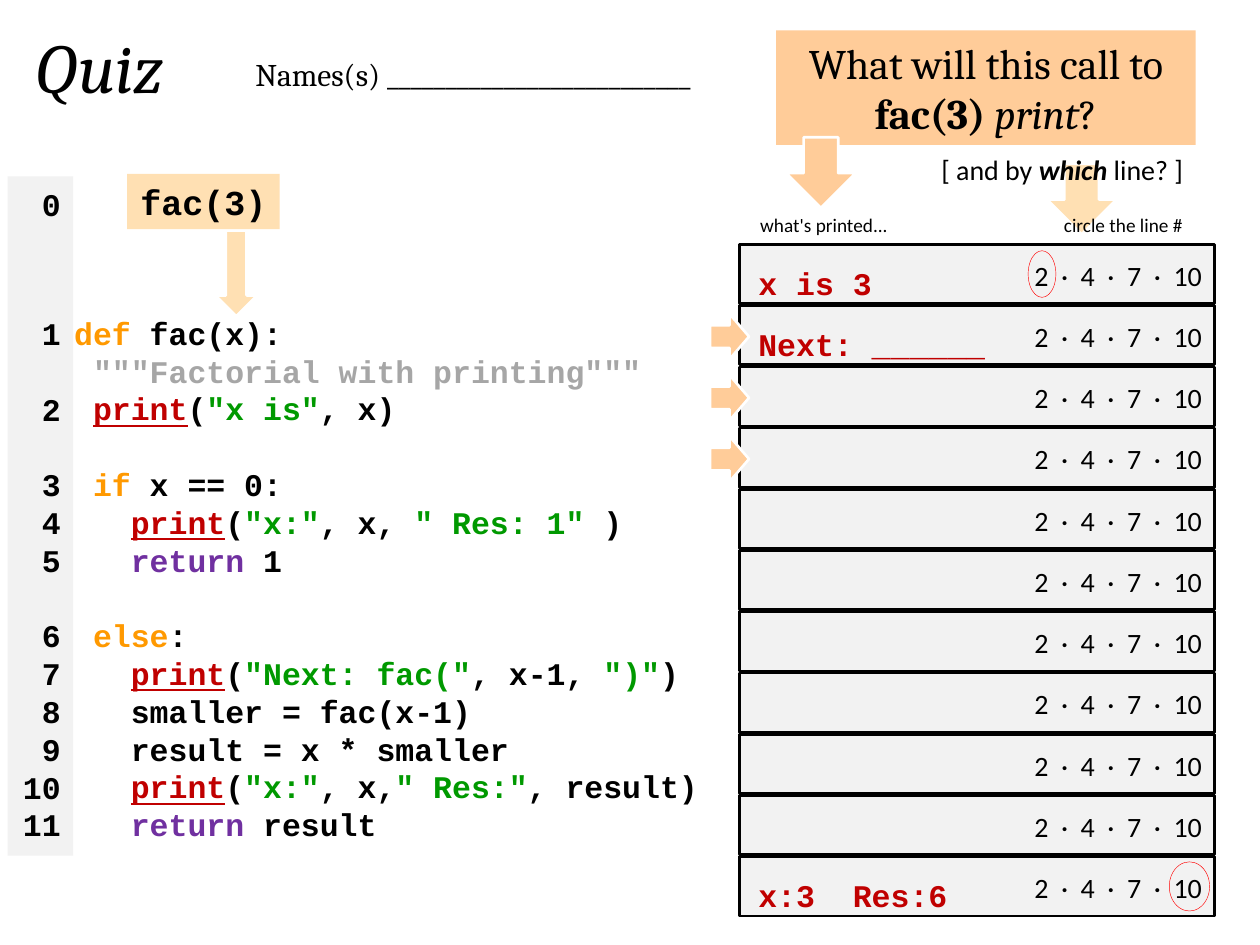
from pptx import Presentation
from pptx.dml.color import RGBColor
from pptx.enum.shapes import MSO_SHAPE as SHAPE
from pptx.enum.text import MSO_ANCHOR as ANCHOR, PP_ALIGN as ALIGN
from pptx.util import Inches, Pt

COLORS = {
    "black": "000000", "white": "FFFFFF", "panel": "F2F2F2",
    "orange": "FFCC99", "sand": "FFE0B3", "ring": "FF0000",
    "keyword": "FF9900", "doc": "A6A6A6", "call": "C00000",
    "string": "009900", "return": "7030A0",
}
MONO, SERIF, SANS = "Courier New", "Cambria", "Calibri"
LINE = 21.6
CHAR = 0.15

PRINT = ("print", "call")
CODE = [
    (1, 0, [("def ", "keyword"), ("fac(x):", "black")]),
    (2, 0, [('"""Factorial with printing"""', "doc")]),
    (2, 0, [PRINT, ("(", "black"), ('"x is"', "string"), (", x)", "black")]),
    (2, 1, [("if ", "keyword"), ("x == 0:", "black")]),
    (4, 0, [PRINT, ("(", "black"), ('"x:"', "string"), (", x, ", "black"),
            ('" Res: 1"', "string"), (" )", "black")]),
    (4, 0, [("return ", "return"), ("1", "black")]),
    (2, 1, [("else", "keyword"), (":", "black")]),
    (4, 0, [PRINT, ("(", "black"), ('"Next: fac("', "string"),
            (", x-1, ", "black"), ('")"', "string"), (")", "black")]),
    (4, 0, [("smaller = fac(x-1)", "black")]),
    (4, 0, [("result = x * smaller", "black")]),
    (4, 0, [PRINT, ("(", "black"), ('"x:"', "string"), (", x,", "black"),
            ('" Res:"', "string"), (", result)", "black")]),
    (4, 0, [("return", "return"), (" result", "black")]),
]
GAPS_BEFORE = {1: 52, 2: LINE, 3: LINE, 6: LINE}
ANSWERS = {0: "x is 3", 1: "Next: ______", 10: "x:3  Res:6"}


def rgb(name):
    return RGBColor.from_string(COLORS[name])


def add_shape(s, kind, x, y, w, h, fill=None, line=None, width=1.5):
    sp = s.shapes.add_shape(kind, Inches(x), Inches(y), Inches(w), Inches(h))
    sp.shadow.inherit = False
    if fill:
        sp.fill.solid()
        sp.fill.fore_color.rgb = rgb(fill)
    else:
        sp.fill.background()
    if line:
        sp.line.color.rgb = rgb(line)
        sp.line.width = Pt(width)
    else:
        sp.line.fill.background()
    return sp


def style(r, font, size, color="black", bold=False, italic=False):
    r.font.name, r.font.size = font, Pt(size)
    r.font.bold, r.font.italic = bold, italic
    r.font.color.rgb = rgb(color)


def add_run(p, text, font, size, color="black", bold=False, italic=False):
    r = p.add_run()
    r.text = text
    style(r, font, size, color, bold, italic)
    return r


def add_text(s, x, y, w, h, text, font, size, color="black", bold=False,
             italic=False, align=ALIGN.CENTER, wrap=False):
    tb = s.shapes.add_textbox(Inches(x), Inches(y), Inches(w), Inches(h))
    tf = tb.text_frame
    tf.word_wrap = wrap
    p = tf.paragraphs[0]
    p.text = text
    p.alignment = align
    for r in p.runs:
        style(r, font, size, color, bold, italic)
    return p


def add_arrow(s, x, y, w, h, fill, rotation=0):
    sp = add_shape(s, SHAPE.DOWN_ARROW, x, y, w, h, fill, "white")
    sp.rotation = rotation


def add_title(s, x, y):
    add_text(s, x, y, 1.26, 0.77, "Quiz", SERIF, 40, italic=True)
    add_text(s, x + 1.49, y + 0.25, 4.21, 0.4, "Names(s) " + "_" * 26,
             SERIF, 18, wrap=True)


def add_question(s, x, y, w, h):
    sp = add_shape(s, SHAPE.RECTANGLE, x, y, w, h, "orange")
    sp.text_frame.word_wrap = True
    p = sp.text_frame.paragraphs[0]
    p.alignment = ALIGN.CENTER
    for text, bold, italic in [("What will this call to ", False, False),
                               ("fac(3) ", True, False),
                               ("print", False, True), ("?", False, False)]:
        add_run(p, text, SERIF, 24, bold=bold, italic=italic)

    add_arrow(s, x + 2.15, y + 1.06, 0.55, 0.56, "sand")
    p = add_text(s, x + 1.2, y + 0.92, 2.14, 0.37, "[ and by ", SANS, 16)
    add_run(p, "which", SANS, 16, bold=True, italic=True)
    add_run(p, " line? ]", SANS, 16)
    add_arrow(s, x + 0.08, y + 0.85, 0.55, 0.56, "orange")
    add_text(s, x - 0.23, y + 1.4, 1.22, 0.29, "what's printed...", SANS, 11)
    add_text(s, x + 2.18, y + 1.4, 1.15, 0.29, "circle the line #", SANS, 11)


def add_line_numbers(s, x, y, w, h):
    sp = add_shape(s, SHAPE.RECTANGLE, x, y, w, h, "panel")
    tf = sp.text_frame
    tf.word_wrap = True
    tf.vertical_anchor = ANCHOR.TOP
    tf.margin_top = Inches(0.07)
    tf.text = "\n".join(str(n) for n in range(12))
    for n, p in enumerate(tf.paragraphs):
        p.alignment = ALIGN.RIGHT
        p.line_spacing = Pt(LINE)
        p.space_before = Pt(GAPS_BEFORE.get(n, 0))
        style(p.runs[0], MONO, 18, bold=True)


def add_code(s, x, y, w, h):
    tb = s.shapes.add_textbox(Inches(x), Inches(y), Inches(w), Inches(h))
    tf = tb.text_frame
    tf.word_wrap = True
    tf.margin_top = Inches(0.07)
    for i, (indent, gap, tokens) in enumerate(CODE):
        p = tf.add_paragraph() if i else tf.paragraphs[0]
        p.line_spacing = Pt(LINE)
        p.space_before = Pt(gap * LINE)
        p._p.get_or_add_pPr().set("marL", str(Inches(indent * CHAR)))
        for text, color in tokens:
            r = add_run(p, text, MONO, 18, color, bold=True)
            r.font.underline = color == "call"


def add_call(s, x, y, w, h):
    add_arrow(s, x + 0.7, y + 0.45, 0.33, 0.68, "sand")
    sp = add_shape(s, SHAPE.RECTANGLE, x, y, w, h, "sand")
    tf = sp.text_frame
    tf.word_wrap = False
    tf.text = "fac(3)"
    tf.paragraphs[0].alignment = ALIGN.CENTER
    style(tf.paragraphs[0].runs[0], MONO, 20, bold=True)


def add_answers(s, x, y, w, h, rows):
    pitch = (h - 0.47) / (rows - 1)
    for i in range(rows):
        top = y + i * pitch
        add_shape(s, SHAPE.RECTANGLE, x, top, w, 0.47, "panel", "black")
        add_text(s, x + 2.23, top + 0.06, 1.55, 0.37,
                 "2  ·  4  ·  7  ·  10", SANS, 16)
        if i in ANSWERS:
            p = add_text(s, x + 0.05, top - 0.08, 2.01, 0.54, ANSWERS[i],
                         MONO, 18, "call", bold=True, align=ALIGN.LEFT)
            p.line_spacing = Pt(35)
        if 1 <= i <= 3:
            add_arrow(s, x - 0.26, top + 0.09, 0.36, 0.31, "orange", 270)
    add_shape(s, SHAPE.OVAL, x + 2.29, y + 0.05, 0.22, 0.37, None, "ring", 0.25)
    add_shape(s, SHAPE.OVAL, x + 3.41, y + h - 0.43, 0.32, 0.39, None, "ring", 0.25)


def main():
    prs = Presentation()
    prs.slide_width, prs.slide_height = Inches(10), Inches(7.5)
    s = prs.slides.add_slide(prs.slide_layouts[6])
    add_question(s, 6.16, 0.24, 3.33, 0.91)
    add_code(s, 0.34, 2.42, 5.5, 4.34)
    add_title(s, 0.16, 0.14)
    add_line_numbers(s, 0.06, 1.4, 0.52, 5.39)
    add_answers(s, 5.87, 1.94, 3.77, 5.33, 11)
    add_call(s, 1.01, 1.38, 1.21, 0.44)
    prs.save("out.pptx")


if __name__ == "__main__":
    main()
